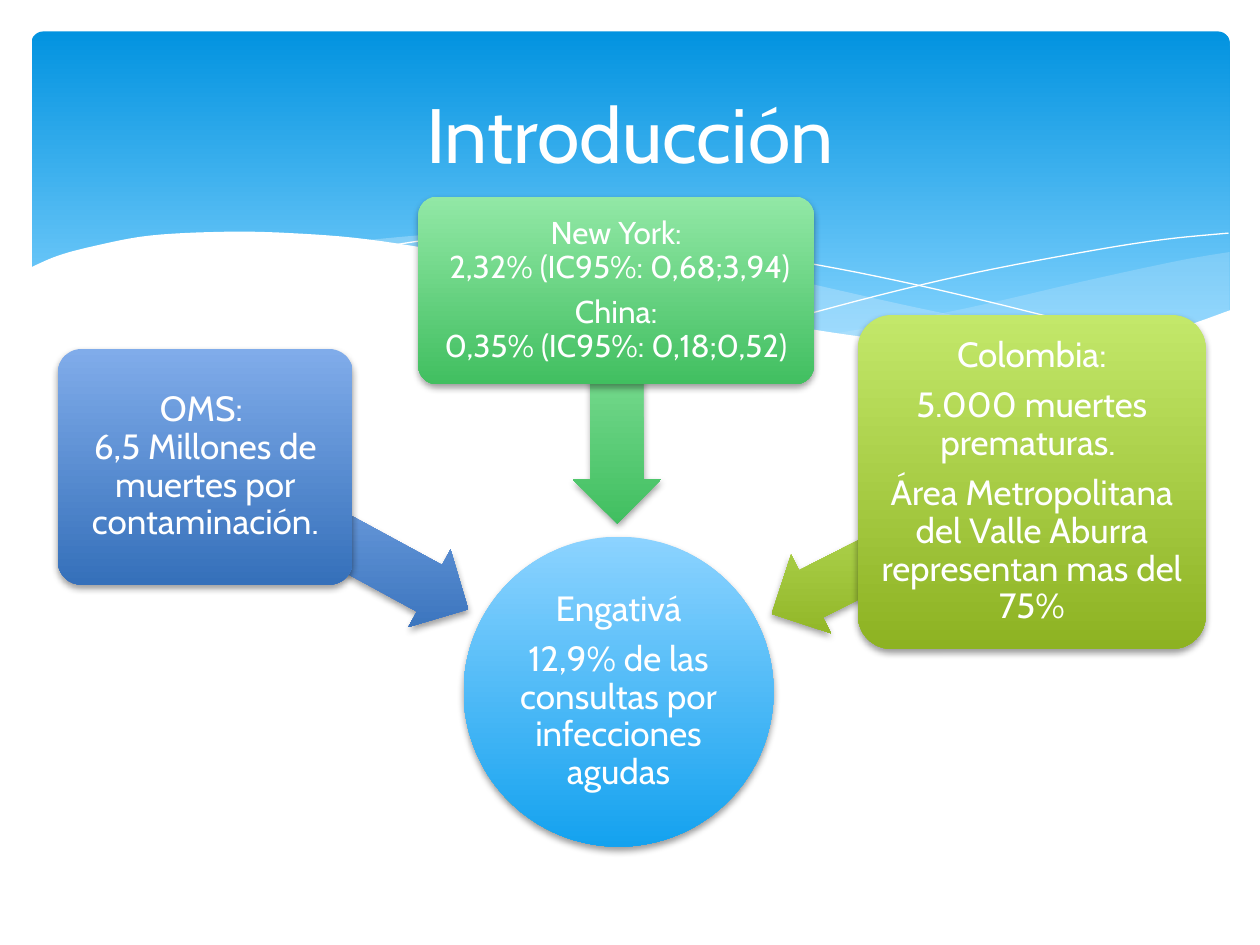
from lxml import etree
from pptx import Presentation
from pptx import util as u
from pptx.dml.color import RGBColor
from pptx.enum import shapes, text
from pptx.oxml.ns import qn

FONT = "Cabin"
WHITE = "FFFFFF"
VEIL = "C6E7FC"
SKY, BLUE = ("8CD3FF", "14A2EF"), ("80ACEA", "3570BA")
GREEN, LIME = ("92E8A6", "41BF60"), ("C3E86A", "8DB222")

# Edges of the waves, as points in inches that a smooth curve runs through
VEIL_RIGHT = [
    [(9.76, 2), (9.35, 2.07), (8.61, 2.23), (7.79, 2.42), (7.06, 2.57), (6.61, 2.65)],
    [(6.61, 2.65), (7.05, 2.71), (7.57, 2.76), (8.03, 2.78), (8.54, 2.76),
     (8.97, 2.7), (9.35, 2.62), (9.76, 2.47)],
]
VEIL_MIDDLE = [
    [(8.93, 2.73), (8.37, 2.65), (7.41, 2.47), (6.29, 2.22), (5.55, 2.05),
     (4.89, 1.94), (4.2, 1.87), (3.61, 1.85), (2.86, 1.91)],
    [(2.86, 1.91), (3.62, 2.03), (4.49, 2.22), (5.66, 2.48), (6.5, 2.64),
     (7.22, 2.74), (7.85, 2.78), (8.38, 2.78), (8.93, 2.73)],
]
FALLING_LINE = [[(3.09, 1.95), (3.53, 1.89), (4.16, 1.87), (4.89, 1.9), (5.56, 1.97),
                 (6.36, 2.08), (7.27, 2.26), (8.31, 2.51), (9.07, 2.72)]]
RISING_LINE = [[(6.13, 2.57), (6.95, 2.35), (7.76, 2.16), (8.66, 1.99),
                (9.24, 1.9), (9.75, 1.85)]]
WHITE_WAVE = [
    [(9.77, 2.46), (9.3, 2.62), (8.75, 2.73), (8.09, 2.77), (7.26, 2.72),
     (6.48, 2.62), (5.55, 2.45), (4.47, 2.2), (3.65, 2.02), (2.92, 1.9),
     (2.3, 1.85), (1.77, 1.84), (1.19, 1.87), (0.76, 1.95), (0.46, 2.03), (0.23, 2.13)],
    [(0.23, 3.29), (9.77, 3.29)],
]


def rgb(color):
    return RGBColor.from_string(color)


def curve(points, steps=6):
    """Catmull-Rom curve through the points."""
    if len(points) < 3:
        return points
    padded = [points[0], *points, points[-1]]
    smooth = []
    for a, b, c, d in zip(padded, padded[1:], padded[2:], padded[3:]):
        for step in range(steps):
            t = step / steps
            smooth.append(tuple(
                q + t * (r - p) / 2 + t**2 * (2 * p - 5 * q + 4 * r - s) / 2
                + t**3 * (3 * q - p - 3 * r + s) / 2
                for p, q, r, s in zip(a, b, c, d)))
    return smooth + [points[-1]]


def add_wave(slide, edges, color, opacity=100, closed=True):
    outline = [(u.Inches(x), u.Inches(y)) for edge in edges for x, y in curve(edge)]
    builder = slide.shapes.build_freeform(*outline[0])
    builder.add_line_segments(outline[1:], close=closed)
    wave = builder.convert_to_shape()
    if closed:
        wave.fill.solid()
        wave.fill.fore_color.rgb = rgb(color)
        wave.line.fill.background()
        tint = wave._element.spPr.find(qn("a:solidFill"))[0]
        etree.SubElement(tint, qn("a:alpha"), val=str(opacity * 1000))
    else:
        wave.fill.background()
        wave.line.color.rgb = rgb(color)
        wave.line.width = u.Pt(0)
    wave.shadow.inherit = False


def add_shadow(shape):
    effects = shape._element.spPr.find(qn("a:effectLst"))
    shadow = etree.SubElement(effects, qn("a:outerShdw"), blurRad=str(u.Pt(4)),
                              dist=str(u.Pt(2)), dir="5400000", rotWithShape="0")
    black = etree.SubElement(shadow, qn("a:srgbClr"), val="000000")
    etree.SubElement(black, qn("a:alpha"), val="38000")


def add_gradient_shape(slide, kind, box, colors, adjustments=(), end=1, shadow=True):
    shape = slide.shapes.add_shape(kind, *map(u.Inches, box))
    for index, value in enumerate(adjustments):
        shape.adjustments[index] = value
    shape.fill.gradient()
    shape.fill.gradient_angle = 270
    for stop, color, position in zip(shape.fill.gradient_stops, colors, (0, end)):
        stop.color.rgb = rgb(color)
        stop.position = position
    # The gradient stays vertical when the shape is turned
    shape._element.spPr.find(qn("a:gradFill")).set("rotWithShape", "0")
    shape.line.fill.background()
    shape.shadow.inherit = False
    if shadow:
        add_shadow(shape)
    return shape


def write_text(shape, paragraphs, size, inset, spacing=0.9, after=0.35):
    frame = shape.text_frame
    frame.word_wrap = True
    frame.vertical_anchor = text.MSO_ANCHOR.MIDDLE
    frame.margin_left = frame.margin_right = u.Inches(inset)
    frame.margin_top = frame.margin_bottom = u.Inches(inset)
    for index, lines in enumerate(paragraphs):
        paragraph = frame.add_paragraph() if index else frame.paragraphs[0]
        paragraph.alignment = text.PP_ALIGN.CENTER
        paragraph.line_spacing = spacing
        paragraph.space_after = u.Pt(size * after)
        for number, line in enumerate(lines.split("\n")):
            if number:
                paragraph.add_line_break()
            run = paragraph.add_run()
            run.text = line
            run.font.size = u.Pt(size)
            run.font.name = FONT
            run.font.color.rgb = rgb(WHITE)


def add_arrow(slide, box, rotation, colors):
    arrow = add_gradient_shape(slide, shapes.MSO_SHAPE.LEFT_ARROW, box, colors, (0.6, 0.5))
    arrow.rotation = rotation


def add_card(slide, box, colors, paragraphs, size=20):
    card = add_gradient_shape(slide, shapes.MSO_SHAPE.ROUNDED_RECTANGLE, box, colors, (0.1,))
    write_text(card, paragraphs, size, 0.04)


def add_background(slide):
    add_gradient_shape(slide, shapes.MSO_SHAPE.ROUNDED_RECTANGLE, (0.25, 0.25, 9.51, 2.7),
                       ("0293E0", "83D3FE"), (0.034,), end=0.9, shadow=False)
    add_wave(slide, VEIL_RIGHT, VEIL, 29)
    add_wave(slide, VEIL_MIDDLE, VEIL, 40)
    add_wave(slide, FALLING_LINE, WHITE, closed=False)
    add_wave(slide, RISING_LINE, WHITE, closed=False)
    add_wave(slide, WHITE_WAVE, WHITE)


def main():
    prs = Presentation()
    prs.slide_width, prs.slide_height = u.Inches(10), u.Inches(7.5)
    slide = prs.slides.add_slide(prs.slide_layouts[6])
    add_background(slide)

    # Title
    title = slide.shapes.add_textbox(*map(u.Inches, (0.5, 0.37, 9, 1.37)))
    write_text(title, ["Introducción"], 44, 0.05, spacing=1.0, after=0)

    # Local finding in the centre
    engativa = add_gradient_shape(slide, shapes.MSO_SHAPE.OVAL, (3.68, 4.26, 2.46, 2.46), SKY)
    write_text(engativa, ["Engativá", "12,9% de las consultas por infecciones agudas"], 20, 0.01)

    # Evidence around it, each card over its arrow
    add_arrow(slide, (1.49, 3.92, 2.37, 0.7), 208.5, BLUE)
    add_card(slide, (0.46, 2.77, 2.34, 1.87), BLUE,
             ["OMS: \n6,5 Millones de muertes por contaminación."])

    add_arrow(slide, (3.97, 2.88, 1.85, 0.7), 269.7, GREEN)
    add_card(slide, (3.32, 1.56, 3.14, 1.49), GREEN,
             ["New York:\n 2,32% (IC95%: 0,68;3,94)",
              "China:\n0,35% (IC95%: 0,18;0,52)"], size=18)

    add_arrow(slide, (6, 4, 2.31, 0.7), 333.1, LIME)
    add_card(slide, (6.81, 2.5, 2.76, 2.65), LIME,
             ["Colombia:", "5.000 muertes prematuras. ",
              "Área Metropolitana del Valle Aburra representan mas del 75%"])

    prs.save("out.pptx")


if __name__ == "__main__":
    main()
